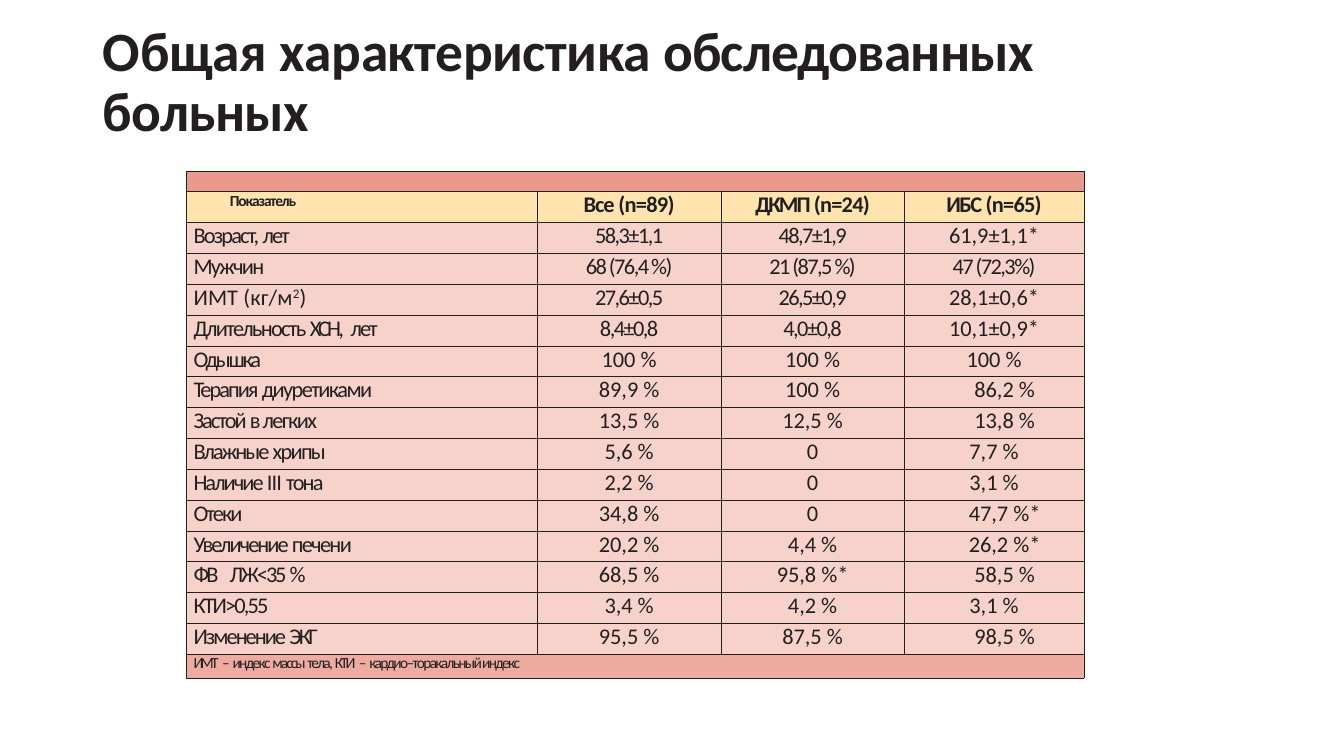
from lxml.etree import SubElement
from pptx import Presentation
from pptx.dml.color import RGBColor
from pptx.enum.text import MSO_ANCHOR, PP_ALIGN
from pptx.oxml.ns import qn
from pptx.util import Inches, Pt

INK = RGBColor(0x23, 0x1F, 0x20)
BAND = RGBColor(0xEA, 0x99, 0x8F)
HEADER = RGBColor(0xFF, 0xE4, 0xAF)
BODY = RGBColor(0xF6, 0xD2, 0xCA)
FOOTER = RGBColor(0xEE, 0xAB, 0xA1)

COLUMN_WIDTHS = [3.48, 1.82, 1.82, 1.78]
TABLE_HEIGHT, BAND_HEIGHT, FOOTER_HEIGHT = 5.03, 0.2, 0.24

header_cells = [
    [("Показатель", -0.8)],
    [("Все ", -0.8), ("(n=89)", -0.5)],
    [("ДКМП ", -1.4), ("(n=24)", -0.5)],
    [("ИБС ", -1.1), ("(n=65)", -0.5)],
]
indicators = [
    ([("Возраст, ", -1.3), ("лет", -1.4)], "58,3±1,1", "48,7±1,9", "61,9±1,1*"),
    ([("Мужчин", -1.2)], "68 (76,4 %)", "21 (87,5 %)", "47 (72,3%)"),
    ([("ИМТ (кг/м", 0.1), ("2", -0.1), (")", 0)], "27,6±0,5", "26,5±0,9", "28,1±0,6*"),
    ([("Длительность ", -1.2), ("ХСН,", -2), (" ", 1.2), ("лет", -1.4)], "8,4±0,8", "4,0±0,8", "10,1±0,9*"),
    ([("Одышка", -1.6)], "100 %", "100 %", "100 %"),
    ([("Терапия ", -1.4), ("диуретиками", -1.1)], "89,9 %", "100 %", "86,2 %"),
    ([("Застой ", -1.4), ("в легких", -1.1)], "13,5 %", "12,5 %", "13,8 %"),
    ([("Влажные ", -1.4), ("хрипы", -1.2)], "5,6 %", "0", "7,7 %"),
    ([("Наличие ", -1.4), ("III ", -0.6), ("тона", -1.3)], "2,2 %", "0", "3,1 %"),
    ([("Отеки", -1.4)], "34,8 %", "0", "47,7 %*"),
    ([("Увеличение ", -1.4), ("печени", -1.2)], "20,2 %", "4,4 %", "26,2 %*"),
    ([("ФВ", -2), (" ", 4.4), ("ЛЖ<35 ", -1.5), ("%", -2)], "68,5 %", "95,8 %*", "58,5 %"),
    ([("КТИ>0,55", -1.3)], "3,4 %", "4,2 %", "3,1 %"),
    ([("Изменение ", -1.4), ("ЭКГ", -1.9)], "95,5 %", "87,5 %", "98,5 %"),
]
footnote = [
    ("ИМТ", -2), (" ", 0), ("– ", -0.5), ("индекс ", -1.2), ("массы ", -1.4), ("тела, ", -1.2),
    ("КТИ", -1.8), (" ", -0.4), ("– ", -0.5), ("кардио–торакальный индекс", -1.2),
]


def add_spans(para, spans, size, bold=False):
    for text, spacing in spans:
        span = para.add_run()
        span.text = text
        span.font.name = "Calibri"
        span.font.size = Pt(size)
        span.font.bold = bold
        span.font.color.rgb = INK
        span.font._element.set("spc", str(round(spacing * 100)))
        if text == "2":
            span.font._element.set("baseline", "31000")


def format_cell(cell, color):
    cell.margin_left = cell.margin_right = cell.margin_top = cell.margin_bottom = 0
    cell.vertical_anchor = MSO_ANCHOR.TOP
    properties = cell._tc.get_or_add_tcPr()
    for side in ("a:lnL", "a:lnR", "a:lnT", "a:lnB"):
        line = SubElement(properties, qn(side), w=str(Pt(0.3)))
        SubElement(SubElement(line, qn("a:solidFill")), qn("a:srgbClr"), val=str(INK))
    cell.fill.solid()
    cell.fill.fore_color.rgb = color


deck = Presentation()
deck.slide_width, deck.slide_height = Inches(13.33), Inches(7.5)
page = deck.slides.add_slide(deck.slide_layouts[5])

title = page.shapes.title
title.left, title.top, title.width, title.height = (Inches(n) for n in (0.92, 0.4, 11.5, 1.45))
frame = title.text_frame
frame.word_wrap = True
frame.vertical_anchor = MSO_ANCHOR.MIDDLE
frame.margin_top, frame.margin_bottom = 0, Inches(0.6)
heading = frame.paragraphs[0]
heading.alignment = PP_ALIGN.LEFT
heading.line_spacing = 0.9
add_spans(heading, [("Общая ", -0.2), ("характеристика ", -0.3), ("обследованных больных", -0.6)], 39.6, True)

row_count = len(indicators) + 3
table = page.shapes.add_table(
    row_count, 4, Inches(1.85), Inches(1.7), Inches(sum(COLUMN_WIDTHS)), Inches(TABLE_HEIGHT)
).table
table.first_row = table.horz_banding = False
for column, width in zip(table.columns, COLUMN_WIDTHS):
    column.width = Inches(width)
for row in table.rows:
    row.height = Inches((TABLE_HEIGHT - BAND_HEIGHT - FOOTER_HEIGHT) / (row_count - 2))
table.rows[0].height = Inches(BAND_HEIGHT)
table.rows[row_count - 1].height = Inches(FOOTER_HEIGHT)

row_colors = [BAND, HEADER] + [BODY] * len(indicators) + [FOOTER]
for row, color in zip(table.rows, row_colors):
    for cell in row.cells:
        format_cell(cell, color)
        SubElement(cell.text_frame.paragraphs[0]._p, qn("a:endParaRPr"), sz="1000")
for index in (0, row_count - 1):
    table.cell(index, 0).merge(table.cell(index, 3))

for column, spans in enumerate(header_cells):
    cell = table.cell(1, column)
    para = cell.text_frame.paragraphs[0]
    add_spans(para, spans, 16 if column else 11, True)
    if column:
        para.alignment = PP_ALIGN.CENTER
    else:
        cell.margin_left = Inches(0.43)

for index, (label, *values) in enumerate(indicators, 2):
    cell = table.cell(index, 0)
    cell.margin_left = Inches(0.07)
    add_spans(cell.text_frame.paragraphs[0], label, 16)
    for column, value in enumerate(values, 1):
        cell = table.cell(index, column)
        para = cell.text_frame.paragraphs[0]
        para.alignment = PP_ALIGN.CENTER
        tight = ("±" in value or "(" in value) and "*" not in value
        add_spans(para, [(value, -1.1 if tight else 0)], 16)
        if column == 3 and value[2] == "," and "%" in value:
            cell.margin_left = Inches(0.21)

cell = table.cell(row_count - 1, 0)
cell.margin_left = Inches(0.07)
add_spans(cell.text_frame.paragraphs[0], footnote, 11)

deck.save("out.pptx")
